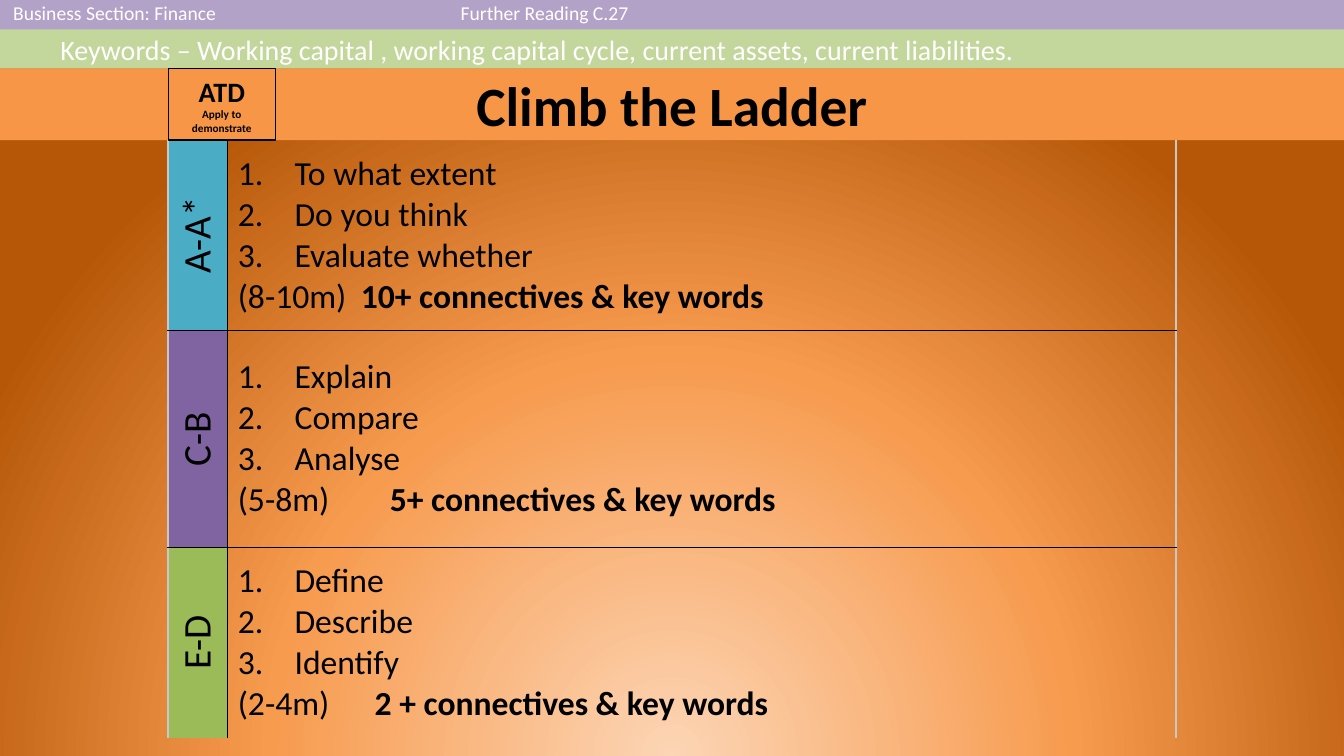
from pptx import Presentation
from pptx.dml.color import RGBColor
from pptx.enum.shapes import MSO_SHAPE
from pptx.enum.text import MSO_ANCHOR, PP_ALIGN
from pptx.oxml import parse_xml
from pptx.oxml.ns import nsdecls, qn
from pptx.oxml.xmlchemy import OxmlElement
from pptx.util import Cm, Pt

RECT = MSO_SHAPE.RECTANGLE
MIDDLE = MSO_ANCHOR.MIDDLE
LEFT, CENTER = PP_ALIGN.LEFT, PP_ALIGN.CENTER

BLACK = RGBColor(0x00, 0x00, 0x00)
WHITE = RGBColor(0xFF, 0xFF, 0xFF)
SILVER = RGBColor(0xC8, 0xC8, 0xC8)
LILAC = RGBColor(0xB3, 0xA2, 0xC7)
LIME = RGBColor(0xC3, 0xD6, 0x9B)
ORANGE = RGBColor(0xF7, 0x96, 0x46)
TEAL = RGBColor(0x4B, 0xAC, 0xC6)
PURPLE = RGBColor(0x80, 0x64, 0xA2)
GREEN = RGBColor(0x9B, 0xBB, 0x59)
PEACH = RGBColor(0xFC, 0xD5, 0xB5)
AMBER = RGBColor(0xF7, 0x9B, 0x4F)
RUST = RGBColor(0xB6, 0x57, 0x08)

WIDE = Cm(33.87)
FONT = "Calibri"
HEADS = ["Business Section: Finance", "Further Reading C.27", ""]
LEVELS = [
    ("A-A*", TEAL, 4.8, ["To what extent", "Do you think", "Evaluate whether"],
     "(8-10m)", 3.1, "10+ connectives & key words"),
    ("C-B", PURPLE, 5.46, ["Explain", "Compare", "Analyse"],
     "(5-8m)", 3.83, "5+ connectives & key words"),
    ("E-D", GREEN, 4.8, ["Define", "Describe", "Identify"],
     "(2-4m)", 3.45, "2 + connectives & key words"),
]


def add_run(para, text, size, color=BLACK, bold=False):
    run = para.add_run()
    run.text = text
    font = run.font
    font.name, font.size, font.bold = FONT, Pt(size), bold
    font.color.rgb = color


def add_para(frame, first, align=LEFT):
    para = frame.paragraphs[0] if first else frame.add_paragraph()
    para.alignment = align
    return para


def add_band(slide, left, top, width, height, fill, lines, align=CENTER):
    band = slide.shapes.add_shape(RECT, left, top, width, height)
    band.shadow.inherit = False
    band.fill.solid()
    band.fill.fore_color.rgb = fill
    band.line.fill.background()
    frame = band.text_frame
    frame.word_wrap = True
    frame.vertical_anchor = MIDDLE
    for i, (text, size, color, bold) in enumerate(lines):
        add_run(add_para(frame, i == 0, align), text, size, color, bold)
    return band


def add_grid(slide, left, top, widths, heights):
    frame = slide.shapes.add_table(len(heights), len(widths), left, top,
                                   Cm(sum(widths)), Cm(sum(heights)))
    grid = frame.table
    grid.first_row = grid.horz_banding = False
    for col, width in zip(grid.columns, widths):
        col.width = Cm(width)
    for row, height in zip(grid.rows, heights):
        row.height = Cm(height)
    return grid


def paint(cell, color=None):
    cell.vertical_anchor = MIDDLE
    if color is None:
        cell.fill.background()
    else:
        cell.fill.solid()
        cell.fill.fore_color.rgb = color


def set_edges(cell, edges):
    props = cell._tc.get_or_add_tcPr()
    for i, side in enumerate("LRTB"):
        color, width = edges.get(side, (None, 0))
        fill = "<a:noFill/>"
        if color is not None:
            fill = f'<a:solidFill><a:srgbClr val="{color}"/></a:solidFill>'
        props.insert(i, parse_xml(
            f'<a:ln{side} {nsdecls("a")} w="{Pt(width)}">{fill}</a:ln{side}>'))


def add_number(para):
    props = para._p.get_or_add_pPr()
    props.set("marL", str(Cm(1.43)))
    props.set("indent", str(-Cm(1.43)))
    mark = OxmlElement("a:buAutoNum")
    mark.set("type", "arabicPeriod")
    props.append(mark)


def add_tab(para, place):
    tabs = OxmlElement("a:tabLst")
    tab = OxmlElement("a:tab")
    tab.set("pos", str(Cm(place)))
    tab.set("algn", "l")
    tabs.append(tab)
    para._p.get_or_add_pPr().append(tabs)


def set_backdrop(slide):
    slide.background.fill.gradient()
    old = slide.element.find(".//" + qn("a:gradFill"))
    stops = "".join(
        f'<a:gs pos="{place}000"><a:srgbClr val="{color}"/></a:gs>'
        for place, color in ((0, PEACH), (52, AMBER), (100, RUST)))
    new = parse_xml(
        f'<a:gradFill {nsdecls("a")} rotWithShape="1"><a:gsLst>{stops}</a:gsLst>'
        '<a:path path="circle"><a:fillToRect l="50000" t="130000" '
        'r="50000" b="-30000"/></a:path></a:gradFill>')
    old.getparent().replace(old, new)


def add_header(slide):
    grid = add_grid(slide, 0, Cm(-0.08), [11.28, 5.64, 16.94], [0.8, 0.8])
    for cell in grid.iter_cells():
        paint(cell, LILAC)
        set_edges(cell, {})
        cell.margin_left = cell.margin_right = Cm(0.33)
        cell.text_frame.paragraphs[0].font.size = Pt(14)
    for cell, text in zip(grid.rows[0].cells, HEADS):
        if text:
            add_run(cell.text_frame.paragraphs[0], text, 14, WHITE)


def add_ladder(slide):
    grid = add_grid(slide, Cm(4.24), Cm(3.53), [1.5, 23.9],
                    [level[2] for level in LEVELS])
    rule, rim = (BLACK, 1), (SILVER, 1.5)
    last = len(LEVELS) - 1
    for i, (grade, color, _, verbs, marks, place, goal) in enumerate(LEVELS):
        side, body = grid.cell(i, 0), grid.cell(i, 1)
        paint(side, color)
        paint(body)
        edges = {}
        if i > 0:
            edges["T"] = rule
        if i < last:
            edges["B"] = rule
        set_edges(side, {**edges, "L": rim, "R": rule})
        set_edges(body, {**edges, "L": rule, "R": rim})
        side._tc.get_or_add_tcPr().set("vert", "vert270")
        add_run(add_para(side.text_frame, True, CENTER), grade, 28)
        for j, verb in enumerate(verbs):
            para = add_para(body.text_frame, j == 0)
            add_number(para)
            add_run(para, verb, 24)
        para = add_para(body.text_frame, False)
        add_tab(para, place)
        add_run(para, marks + "\t", 24)
        add_run(para, goal, 24, bold=True)


def main():
    deck = Presentation()
    deck.slide_width, deck.slide_height = WIDE, Cm(19.05)
    slide = deck.slides.add_slide(deck.slide_layouts[6])
    set_backdrop(slide)
    add_header(slide)
    words = add_band(
        slide, 0, Cm(0.74), WIDE, Cm(0.99), LIME,
        [("Keywords – Working capital , working capital cycle, "
          "current assets, current liabilities.", 20, WHITE, False)], LEFT)
    props = words.text_frame.paragraphs[0]._p.get_or_add_pPr()
    props.set("indent", str(Cm(1.27)))
    add_band(slide, 0, Cm(1.73), WIDE, Cm(1.8), ORANGE,
             [("Climb the Ladder", 39.6, BLACK, True)])
    add_ladder(slide)
    badge = add_band(slide, Cm(4.24), Cm(1.73), Cm(2.7), Cm(1.8), ORANGE,
                     [("ATD", 20, BLACK, True), ("Apply to", 8, BLACK, True),
                      ("demonstrate", 8, BLACK, True)])
    badge.line.color.rgb = BLACK
    badge.line.width = Pt(0.75)
    deck.save("out.pptx")


if __name__ == "__main__":
    main()
